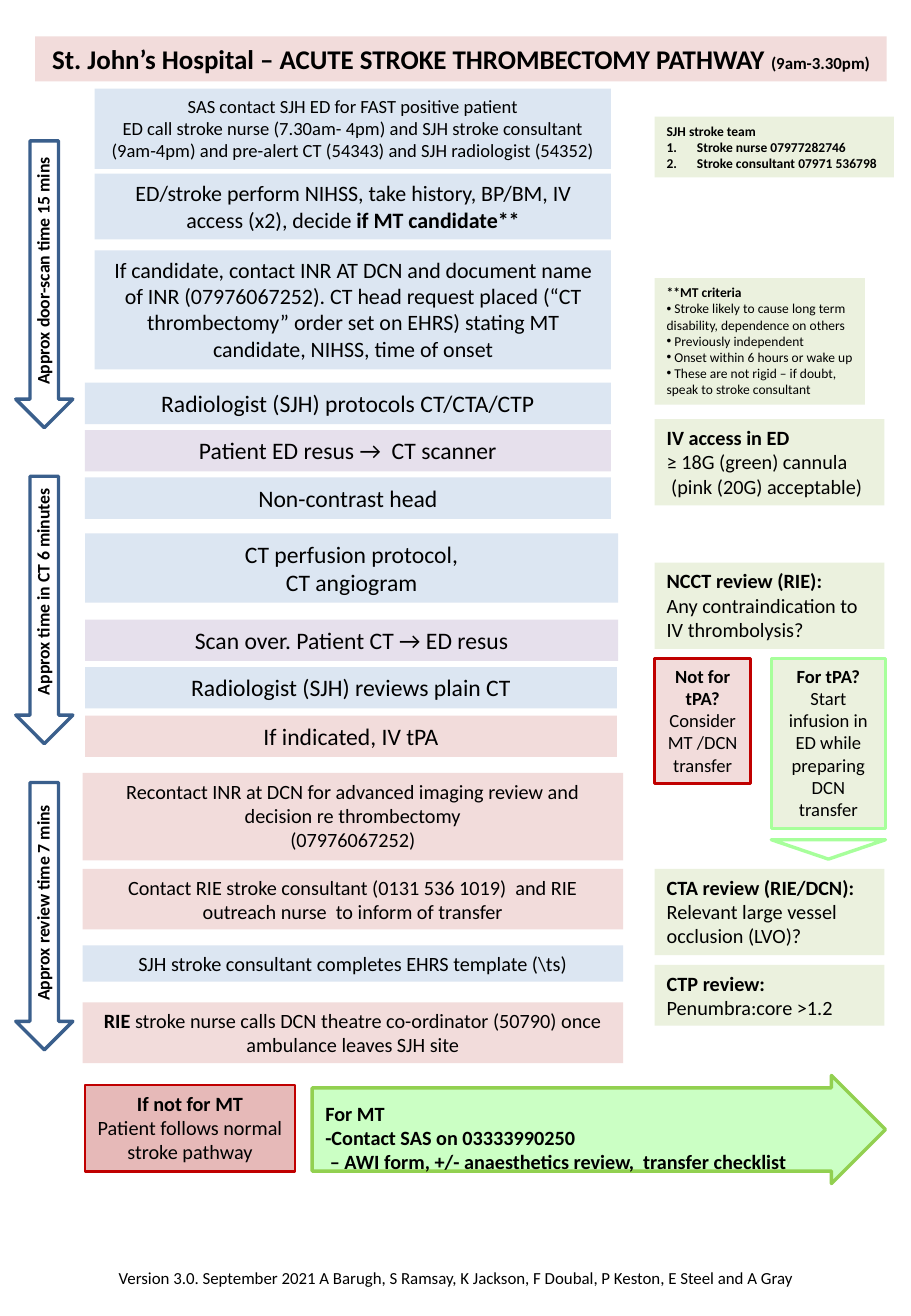
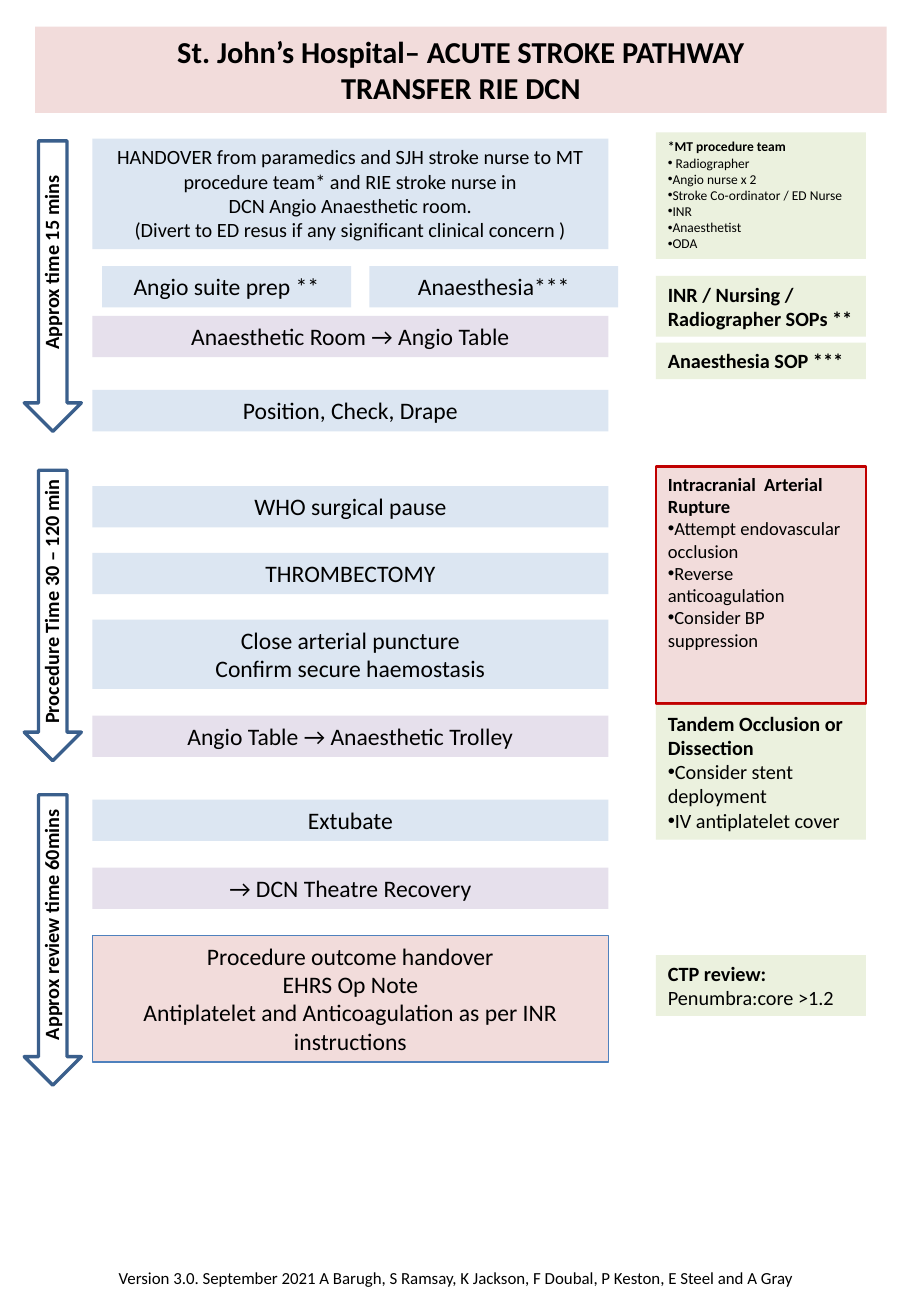
"""Build the two-page stroke thrombectomy pathway."""
from collections import namedtuple
from dataclasses import dataclass, field

from lxml.etree import SubElement
from pptx import Presentation
from pptx.dml.color import RGBColor
from pptx.enum.shapes import MSO_SHAPE as Preset
from pptx.enum.text import MSO_ANCHOR as Anchor, MSO_AUTO_SIZE as AutoSize, PP_ALIGN as Align
from pptx.oxml.ns import qn
from pptx.util import Emu, Pt

PX = 9144
Style = namedtuple("Style", "fill line weight align", defaults=(None, None, 0, Align.CENTER))


@dataclass(frozen=True)
class Theme:
    font: str = "Calibri"
    ink: str = "000000"
    tiny: float = 8
    footer: float = 10
    label: float = 10.5
    small: float = 11
    body: float = 12
    medium: float = 13
    large: float = 14
    title: float = 16
    title_large: float = 18
    styles: dict = field(default_factory=lambda: {
        "step": Style("DCE6F2"),
        "move": Style("E6E0EC"),
        "decide": Style("F2DCDB"),
        "outcome": Style("F2DCDB", "4F81BD", 0.75),
        "note": Style("EBF1DE", align=Align.LEFT),
        "stop": Style("F2DCDB", "C00000", 1.5),
        "alert": Style("F2DCDB", "C00000", 1.5, Align.LEFT),
        "exit": Style("E6B9B8", "C00000", 1.5),
        "go": Style("EBF1DE", "A7FF9B", 1.5),
        "go_pointer": Style(None, "A7FF9B", 2),
        "go_arrow": Style("A7FF9B", "92D050", 2),
        "time": Style(None, "3A5F8C", 2),
        "plain": Style(),
        "plain_left": Style(align=Align.LEFT),
    })


theme = Theme()


def style_shape(shape, style):
    """Apply a named fill and outline."""
    look = theme.styles[style]
    if look.fill:
        shape.fill.solid()
        shape.fill.fore_color.rgb = RGBColor.from_string(look.fill)
    else:
        shape.fill.background()
    if look.line:
        shape.line.color.rgb = RGBColor.from_string(look.line)
        shape.line.width = Pt(look.weight)
    else:
        shape.line.fill.background()
    shape.shadow.inherit = False


def write_text(shape, text, size, style):
    """Write lines; bars enclose bold, a leading • or # makes a list item."""
    frame = shape.text_frame
    frame_format = {"word_wrap": True, "auto_size": AutoSize.NONE, "vertical_anchor": Anchor.TOP}
    for name, value in frame_format.items():
        setattr(frame, name, value)
    for index, line in enumerate(text.split("\n")):
        paragraph = frame.add_paragraph() if index else frame.paragraphs[0]
        paragraph.alignment = theme.styles[style].align
        marker = line[0] if line[0] in "•#" else ""
        properties = paragraph._p.get_or_add_pPr()
        if marker == "•":
            SubElement(properties, qn("a:buFont"), typeface="Arial")
            SubElement(properties, qn("a:buChar"), char=marker)
        elif marker:
            properties.set("marL", str(25 * PX))
            properties.set("indent", str(-25 * PX))
            SubElement(properties, qn("a:buFont"), typeface="+mj-lt")
            SubElement(properties, qn("a:buAutoNum"), type="arabicPeriod")
        for position, part in enumerate(line[len(marker):].split("|")):
            if part:
                run = paragraph.add_run()
                run.text = part
                run_format = {"name": theme.font, "size": Pt(size), "bold": position % 2 == 1}
                for name, value in run_format.items():
                    setattr(run.font, name, value)
                run.font.color.rgb = RGBColor.from_string(theme.ink)


FOOTER = "Version 3.0. September 2021 A Barugh, S Ramsay, K Jackson, F Doubal, P Keston, E Steel and A Gray"
CTP_REVIEW = "|CTP review:|\nPenumbra:core >1.2"

pathway_boxes = [
    (78, 73, 425, 66, "step", theme.small,
     "SAS contact SJH ED for FAST positive patient\n"
     "ED call stroke nurse (7.30am- 4pm) and SJH stroke consultant (9am-4pm) "
     "and pre-alert CT (54343) and SJH radiologist (54352)"),
    (78, 143, 425, 54, "step", theme.medium,
     "ED/stroke perform NIHSS, take history, BP/BM, IV access (x2), decide |if MT candidate**|"),
    (78, 206, 425, 98, "step", theme.medium,
     "If candidate, contact INR AT DCN and document name of INR (07976067252). CT head request placed "
     "(“CT thrombectomy” order set on EHRS) stating MT candidate, NIHSS, time of onset"),
    (70, 315, 433, 34, "step", theme.large, "Radiologist (SJH) protocols CT/CTA/CTP"),
    (70, 354, 433, 34, "move", theme.large, "Patient ED resus →  CT scanner"),
    (70, 393, 433, 34, "step", theme.large, "Non-contrast head"),
    (70, 439, 439, 57, "step", theme.large, "CT perfusion protocol,\nCT angiogram"),
    (70, 510, 439, 34, "move", theme.large, "Scan over. Patient CT → ED resus"),
    (70, 549, 438, 34, "step", theme.large, "Radiologist (SJH) reviews plain CT"),
    (70, 589, 438, 34, "decide", theme.large, "If indicated, IV tPA"),
    (68, 636, 445, 72, "decide", theme.body,
     "Recontact INR at DCN for advanced imaging review and decision re thrombectomy\n(07976067252)"),
    (68, 715, 445, 50, "decide", theme.body,
     "Contact RIE stroke consultant (0131 536 1019)  and RIE outreach nurse  to inform of transfer"),
    (68, 778, 445, 30, "step", theme.body, "SJH stroke consultant completes EHRS template (\\ts)"),
    (68, 825, 445, 50, "decide", theme.body,
     "|RIE |stroke nurse calls DCN theatre co-ordinator (50790) once ambulance leaves SJH site"),
    (70, 893, 173, 71, "exit", theme.body, "|If not for MT|\nPatient follows normal stroke pathway"),
    (539, 96, 197, 50, "note", theme.tiny,
     "|SJH stroke team|\n#|Stroke nurse 07977282746|\n#|Stroke consultant 07971 536798|"),
    (539, 229, 173, 104, "note", theme.tiny,
     "|**MT criteria|\n"
     "• Stroke likely to cause long term disability, dependence on others\n"
     "• Previously independent\n"
     "• Onset within 6 hours or wake up\n"
     "• These are not rigid – if doubt, speak to stroke consultant"),
    (539, 345, 189, 71, "note", theme.body,
     "|IV access in ED|\n≥ 18G (green) cannula\n (pink (20G) acceptable)"),
    (539, 463, 189, 71, "note", theme.body,
     "|NCCT review (RIE):|\nAny contraindication to IV thrombolysis?"),
    (539, 542, 79, 103, "stop", theme.small, "|Not for tPA?|\nConsider MT /DCN transfer"),
    (635, 542, 94, 140, "go", theme.small,
     "|For tPA?|\nStart infusion in ED while preparing DCN transfer"),
    (539, 715, 189, 71, "note", theme.body,
     "|CTA review (RIE/DCN):|\nRelevant large vessel occlusion (LVO)?"),
    (539, 794, 189, 50, "note", theme.body, CTP_REVIEW),
]

transfer_boxes = [
    (76, 114, 425, 91, "step", theme.body,
     "HANDOVER from paramedics and SJH stroke nurse to MT procedure team* and RIE stroke nurse in\n"
     "DCN Angio Anaesthetic room.\n"
     "(Divert to ED resus if any significant clinical concern )"),
    (84, 219, 205, 34, "step", theme.large, "Angio suite prep **"),
    (304, 219, 205, 34, "step", theme.large, "Anaesthesia***"),
    (76, 260, 425, 34, "move", theme.large, "Anaesthetic Room → Angio Table"),
    (76, 321, 425, 34, "step", theme.large, "Position, Check, Drape"),
    (76, 400, 425, 34, "step", theme.large, "WHO surgical pause"),
    (76, 455, 425, 34, "step", theme.large, "THROMBECTOMY"),
    (76, 510, 425, 57, "step", theme.large, "Close arterial puncture\nConfirm secure haemostasis"),
    (76, 589, 425, 34, "move", theme.large, "Angio Table → Anaesthetic Trolley"),
    (76, 658, 425, 34, "step", theme.large, "Extubate"),
    (76, 714, 425, 34, "move", theme.large, "→ DCN Theatre Recovery"),
    (76, 770, 425, 104, "outcome", theme.large,
     "Procedure outcome handover\nEHRS Op Note\n"
     "Antiplatelet and Anticoagulation as per INR instructions"),
    (540, 109, 173, 104, "note", theme.tiny,
     "|*MT procedure team|\n• Radiographer\n•Angio nurse x 2\n"
     "•Stroke Co-ordinator / ED Nurse\n•INR\n•Anaesthetist\n•ODA"),
    (540, 227, 173, 50, "note", theme.body, "|INR / Nursing / Radiographer SOPs **|"),
    (540, 282, 173, 30, "note", theme.body, "|Anaesthesia SOP ***|"),
    (540, 384, 173, 195, "alert", theme.small,
     "|Intracranial  Arterial Rupture|\n•Attempt endovascular occlusion\n"
     "•Reverse anticoagulation\n•Consider BP suppression"),
    (540, 580, 173, 111, "note", theme.body,
     "|Tandem Occlusion or Dissection|\n•Consider stent deployment\n•IV antiplatelet cover"),
    (540, 786, 173, 50, "note", theme.body, CTP_REVIEW),
]

pages = [
    {
        "title": "|St. John’s Hospital – ACUTE STROKE THROMBECTOMY PATHWAY ||(9am-3.30pm)|",
        "title_size": theme.title, "title_top": 30, "title_height": 37,
        "boxes": pathway_boxes, "arrow_left": 13, "label_size": theme.label,
        "arrows": [(116, 236, 223, "|Approx door-scan time 15 mins|"),
                   (392, 220, 487, "|Approx time in CT 6 minutes|"),
                   (644, 220, 743, "|Approx review time 7 mins|")],
    },
    {
        "title": "|St. John’s Hospital– ACUTE STROKE PATHWAY|\n|TRANSFER RIE DCN|",
        "title_size": theme.title_large, "title_top": 22, "title_height": 71,
        "boxes": transfer_boxes, "arrow_left": 20, "label_size": theme.body,
        "arrows": [(116, 239, 216, "|Approx time 15 mins|"),
                   (387, 239, 495, "|Procedure Time 30 – 120 min|"),
                   (654, 239, 761, "|Approx review time 60mins|")],
    },
]

presentation = Presentation()
presentation.slide_width, presentation.slide_height = Emu(750 * PX), Emu(1083 * PX)
title_only = presentation.slide_layouts[5]

for page in pages:
    slide = presentation.slides.add_slide(title_only)
    title = slide.shapes.title
    bounds = {"left": 29, "top": page["title_top"], "width": 701, "height": page["title_height"]}
    for name, value in bounds.items():
        setattr(title, name, Emu(value * PX))
    style_shape(title, "decide")
    write_text(title, page["title"], page["title_size"], "decide")

    for *box, style, size, text in page["boxes"]:
        shape = slide.shapes.add_shape(Preset.RECTANGLE, *[Emu(value * PX) for value in box])
        style_shape(shape, style)
        write_text(shape, text, size, style)

    for top, height, middle, text in page["arrows"]:
        box = (page["arrow_left"], top, 47, height)
        arrow = slide.shapes.add_shape(Preset.DOWN_ARROW, *[Emu(value * PX) for value in box])
        style_shape(arrow, "time")
        box = (page["arrow_left"] + 22 - 115, middle - 14, 230, 28)
        label = slide.shapes.add_textbox(*[Emu(value * PX) for value in box])
        write_text(label, text, page["label_size"], "plain")
        label.text_frame.word_wrap = False
        label.text_frame.vertical_anchor = Anchor.MIDDLE
        label.rotation = 270

    footer = slide.shapes.add_textbox(0, Emu(1038 * PX), Emu(750 * PX), Emu(27 * PX))
    write_text(footer, FOOTER, theme.footer, "plain")

pathway = presentation.slides[0]
pathway.shapes.title.text_frame.paragraphs[0].runs[-1].font.size = Pt(theme.footer)

pointer = pathway.shapes.add_shape(Preset.ISOSCELES_TRIANGLE, *[Emu(value * PX) for value in (635, 691, 94, 16)])
style_shape(pointer, "go_pointer")
pointer.rotation = 180

transfer = pathway.shapes.add_shape(Preset.RIGHT_ARROW, *[Emu(value * PX) for value in (257, 885, 472, 89)])
transfer.adjustments[0], transfer.adjustments[1] = 0.77, 0.5
style_shape(transfer, "go_arrow")
SubElement(transfer._element.spPr.find(qn("a:solidFill"))[0], qn("a:alpha"), val="58000")

actions = pathway.shapes.add_textbox(*[Emu(value * PX) for value in (258, 901, 457, 91)])
write_text(actions, "|For MT|\n|-Contact SAS on 03333990250|\n"
           "| – AWI form, +/- anaesthetics review,  transfer checklist|", theme.body, "plain_left")

presentation.save("out.pptx")
